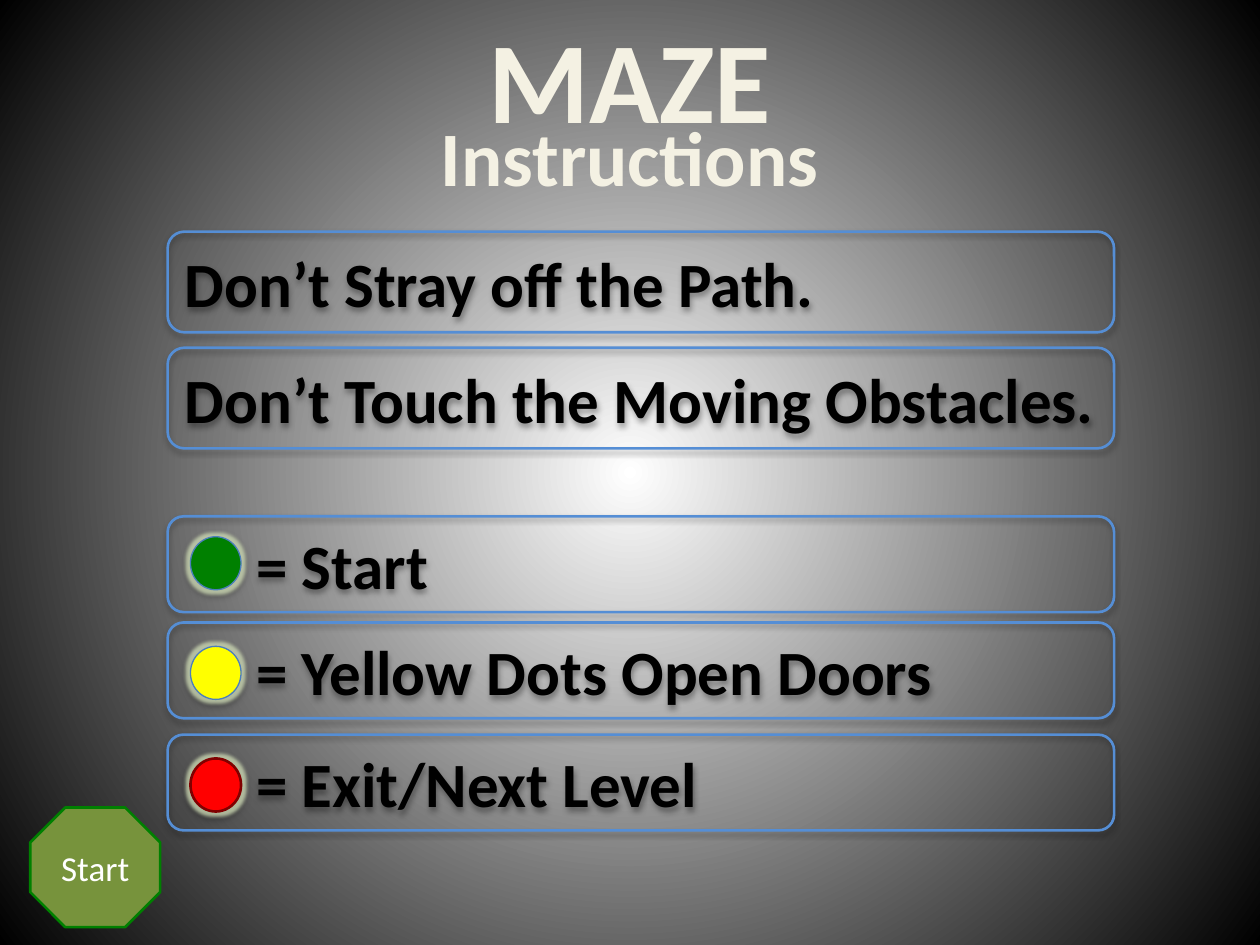
from dataclasses import dataclass

from lxml.etree import SubElement
from pptx import Presentation
from pptx.dml.color import RGBColor
from pptx.enum.shapes import MSO_SHAPE
from pptx.enum.text import MSO_ANCHOR, PP_ALIGN
from pptx.oxml.ns import qn
from pptx.util import Cm, Pt


@dataclass(frozen=True)
class Theme:
    font: str = "Calibri"
    cream: str = "F4F1E3"
    black: str = "000000"
    white: str = "FFFFFF"
    frame: str = "558ED5"
    dot_edge: str = "4B7EBC"
    green: str = "008000"
    yellow: str = "FFFF00"
    red: str = "FF0000"
    dark_red: str = "800000"
    olive: str = "77933C"
    glow: str = "D7E4BD"
    title_size: int = 66
    subtitle_size: int = 44
    rule_size: int = 36
    button_size: int = 20


class MazeSlide:
    def __init__(self, slide, theme):
        self.slide = slide
        self.theme = theme

    def background(self, inner, outer):
        fill = self.slide.background.fill
        fill.gradient()
        for stop, color, position in zip(fill.gradient_stops, (inner, outer), (0, 1)):
            stop.color.rgb = RGBColor.from_string(color)
            stop.position = position
        gradient = self.slide.element.find(".//" + qn("a:gradFill"))
        gradient.remove(gradient.find(qn("a:lin")))
        circle = SubElement(gradient, qn("a:path"), path="circle")
        SubElement(circle, qn("a:fillToRect"), l="50000", t="50000", r="50000", b="50000")

    def add_text(self, shape, text, size, color, bold=True, align=PP_ALIGN.CENTER):
        frame = shape.text_frame
        frame.word_wrap = True
        frame.vertical_anchor = MSO_ANCHOR.MIDDLE
        paragraph = frame.paragraphs[0]
        paragraph.alignment = align
        run = paragraph.add_run()
        run.text = text
        run.font.name = self.theme.font
        run.font.size = Pt(size)
        run.font.bold = bold
        run.font.color.rgb = RGBColor.from_string(color)

    def heading(self, text, top, size):
        box = self.slide.shapes.add_textbox(Cm(1.27), Cm(top), Cm(22.86), Cm(3.18))
        self.add_text(box, text, size, self.theme.cream)

    def shape(self, kind, left, top, width, height, fill, line, weight):
        shape = self.slide.shapes.add_shape(kind, Cm(left), Cm(top), Cm(width), Cm(height))
        shape.shadow.inherit = False
        if fill:
            shape.fill.solid()
            shape.fill.fore_color.rgb = RGBColor.from_string(fill)
        else:
            shape.fill.background()
        shape.line.color.rgb = RGBColor.from_string(line)
        shape.line.width = Pt(weight)
        return shape

    def effect(self, shape, tag, color, alpha, **settings):
        effects = shape.element.spPr.find(qn("a:effectLst"))
        node = SubElement(effects, qn(tag), **settings)
        tint = SubElement(node, qn("a:srgbClr"), val=color)
        SubElement(tint, qn("a:alpha"), val=str(alpha * 1000))

    def drop_shadow(self, shape):
        self.effect(shape, "a:outerShdw", self.theme.black, 35, blurRad=str(Pt(3.1)),
                    dist=str(Pt(1.8)), dir="5400000", rotWithShape="0")

    def rule(self, text, top, height, indent=0.25):
        panel = self.shape(MSO_SHAPE.ROUNDED_RECTANGLE, 3.38, top, 19.08, height,
                           None, self.theme.frame, 1.5)
        self.drop_shadow(panel)
        panel.text_frame.margin_left = Cm(indent)
        self.add_text(panel, text, self.theme.rule_size, self.theme.black, align=PP_ALIGN.LEFT)

    def dot(self, top, fill, line, weight):
        dot = self.shape(MSO_SHAPE.OVAL, 3.84, top, 1.02, 1.07, fill, line, weight)
        self.effect(dot, "a:glow", self.theme.glow, 75, rad=str(Pt(4)))
        self.drop_shadow(dot)

    def button(self, text):
        button = self.shape(MSO_SHAPE.OCTAGON, 0.61, 16.28, 2.62, 2.41,
                            self.theme.olive, self.theme.green, 1.5)
        self.add_text(button, text, self.theme.button_size, self.theme.white, bold=False)


def main():
    theme = Theme()
    deck = Presentation()
    deck.slide_width, deck.slide_height = Cm(25.4), Cm(19.05)
    maze = MazeSlide(deck.slides.add_slide(deck.slide_layouts[6]), theme)
    maze.background(theme.white, theme.black)

    # Headings
    maze.heading("MAZE", -0.03, theme.title_size)
    maze.heading("Instructions", 1.55, theme.subtitle_size)

    # Rules of the game
    maze.rule("Don’t Stray off the Path.", 4.67, 2.03)
    maze.rule("Don’t Touch the Moving Obstacles.", 7.01, 2.03)

    # Legend of the dots
    legend = [
        ("= Start", 10.41, 10.82, theme.green, theme.dot_edge, 0.75),
        ("= Yellow Dots Open Doors", 12.55, 13.03, theme.yellow, theme.dot_edge, 0.75),
        ("= Exit/Next Level", 14.81, 15.29, theme.red, theme.dark_red, 1.5),
    ]
    for meaning, panel_top, dot_top, fill, edge, weight in legend:
        maze.rule(meaning, panel_top, 1.93, indent=1.69)
        maze.dot(dot_top, fill, edge, weight)

    # Start button
    maze.button("Start")

    deck.save("out.pptx")


if __name__ == "__main__":
    main()
